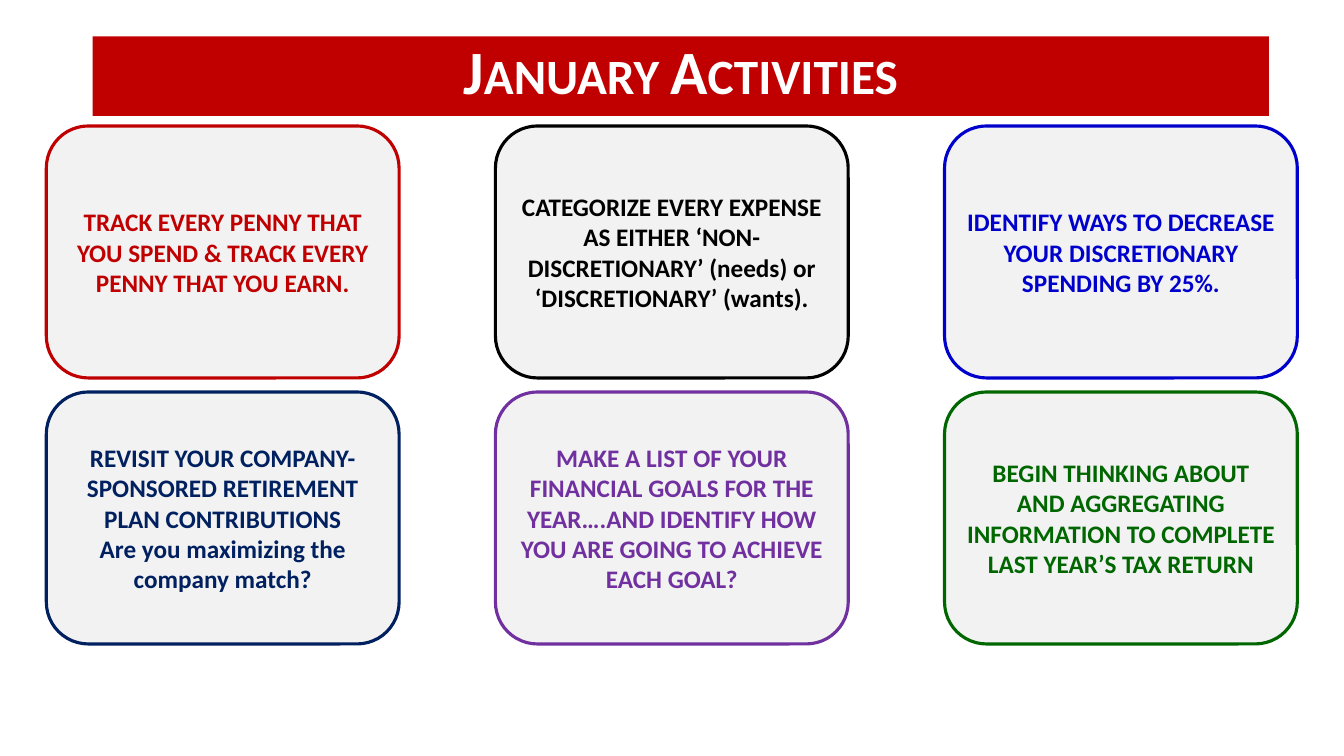
from pptx import Presentation
from pptx.dml.color import RGBColor
from pptx.enum.shapes import MSO_SHAPE
from pptx.enum.text import MSO_ANCHOR, PP_ALIGN
from pptx.util import Pt

WHITE = RGBColor(0xFF, 0xFF, 0xFF)
PALE_GRAY = RGBColor(0xF2, 0xF2, 0xF2)
RED = RGBColor(0xC0, 0x00, 0x00)
BLACK = RGBColor(0x00, 0x00, 0x00)
BLUE = RGBColor(0x00, 0x00, 0xCC)
NAVY = RGBColor(0x00, 0x20, 0x60)
PURPLE = RGBColor(0x70, 0x30, 0xA0)
GREEN = RGBColor(0x00, 0x66, 0x00)

CARD_LEFT, CARD_TOP = 33.1, 90
CARD_WIDTH, CARD_HEIGHT = 252, 180
COLUMN_STEP, ROW_STEP = 320.8, 190

ACTIVITIES = [
    [
        ("TRACK EVERY PENNY THAT YOU SPEND & TRACK EVERY PENNY THAT YOU EARN.", RED),
        ("CATEGORIZE EVERY EXPENSE AS EITHER ‘NON-DISCRETIONARY’ (needs) or "
         "‘DISCRETIONARY’ (wants).", BLACK),
        ("IDENTIFY WAYS TO DECREASE YOUR DISCRETIONARY SPENDING BY 25%.", BLUE),
    ],
    [
        ("REVISIT YOUR COMPANY-SPONSORED RETIREMENT PLAN CONTRIBUTIONS\n"
         "Are you maximizing the company match?", NAVY),
        ("MAKE A LIST OF YOUR FINANCIAL GOALS FOR THE YEAR….AND IDENTIFY HOW "
         "YOU ARE GOING TO ACHIEVE EACH GOAL?", PURPLE),
        ("BEGIN THINKING ABOUT AND AGGREGATING INFORMATION TO COMPLETE "
         "LAST YEAR’S TAX RETURN", GREEN),
    ],
]


class ActivitySlide:
    font_name = "Calibri"

    def __init__(self, slide):
        self.slide = slide

    def filled_shape(self, kind, left, top, width, height, fill):
        shape = self.slide.shapes.add_shape(
            kind, Pt(left), Pt(top), Pt(width), Pt(height))
        shape.shadow.inherit = False
        shape.fill.solid()
        shape.fill.fore_color.rgb = fill
        return shape

    def centered_text(self, shape, text, size, color, anchor):
        frame = shape.text_frame
        frame.text = text
        frame.word_wrap = True
        frame.vertical_anchor = anchor
        for paragraph in frame.paragraphs:
            paragraph.alignment = PP_ALIGN.CENTER
            for run in paragraph.runs:
                run.font.name = self.font_name
                run.font.size = Pt(size)
                run.font.bold = True
                run.font.color.rgb = color
        return frame

    def banner(self, title):
        """Add the title bar, set in small capitals."""
        bar = self.filled_shape(MSO_SHAPE.RECTANGLE, 66.2, 25.9, 840.2, 56.9, RED)
        bar.line.fill.background()
        frame = self.centered_text(bar, title, 44, WHITE, MSO_ANCHOR.TOP)
        heading = frame.paragraphs[0]
        heading.line_spacing = 0.9
        heading.runs[0]._r.get_or_add_rPr().set("cap", "small")

    def card(self, column, row, activity, color):
        card = self.filled_shape(
            MSO_SHAPE.ROUNDED_RECTANGLE,
            CARD_LEFT + column * COLUMN_STEP, CARD_TOP + row * ROW_STEP,
            CARD_WIDTH, CARD_HEIGHT, PALE_GRAY)
        card.line.color.rgb = color
        card.line.width = Pt(2.25)
        self.centered_text(card, activity, 18, color, MSO_ANCHOR.MIDDLE)


def main():
    presentation = Presentation()
    presentation.slide_width = Pt(960)
    presentation.slide_height = Pt(540)
    january = ActivitySlide(
        presentation.slides.add_slide(presentation.slide_layouts[6]))
    january.banner("January Activities")
    for row, activities in enumerate(ACTIVITIES):
        for column, (activity, color) in enumerate(activities):
            january.card(column, row, activity, color)
    presentation.save("out.pptx")


if __name__ == "__main__":
    main()
